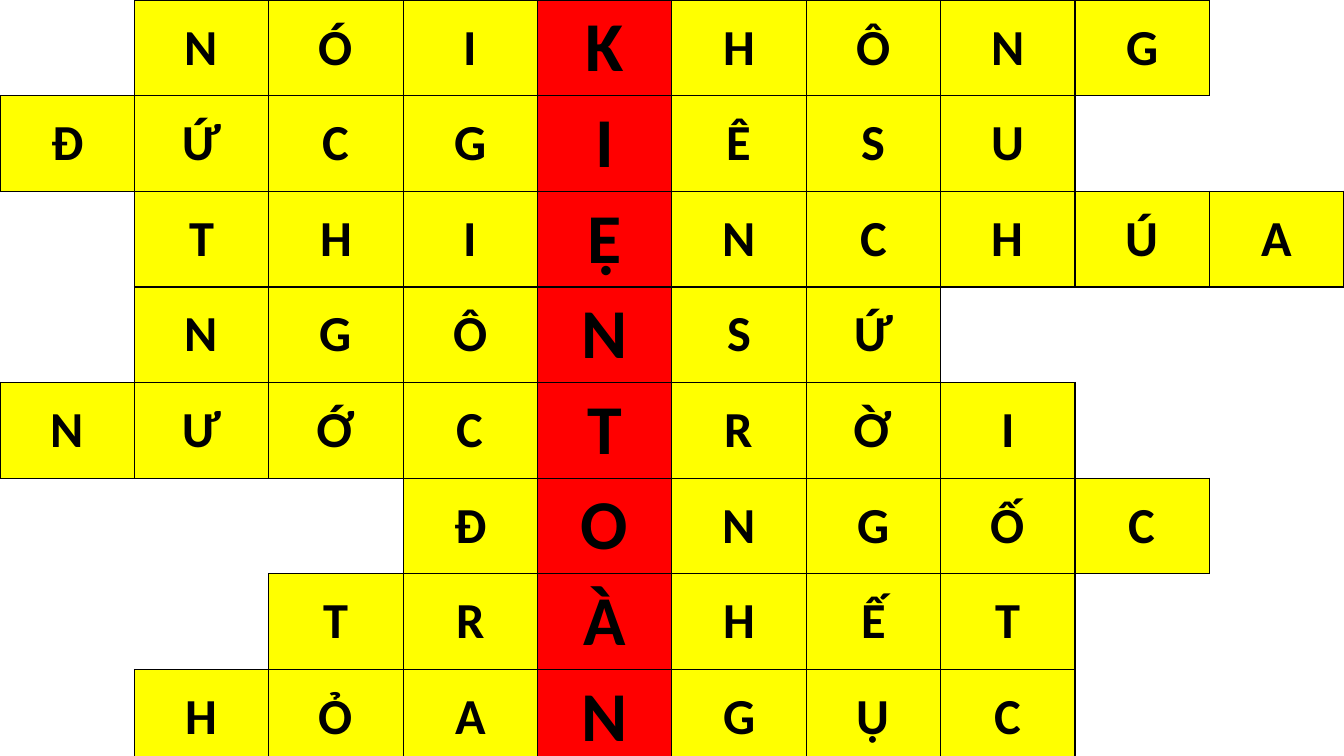
from dataclasses import dataclass

from lxml import etree
from pptx import Presentation
from pptx import util as u
from pptx.dml.color import RGBColor
from pptx.enum import text
from pptx.oxml import ns


@dataclass(frozen=True)
class Theme:
    font: str = "Calibri"
    ink: str = "000000"
    letter_fill: str = "FFFF00"
    keyword_fill: str = "FF0000"
    empty_fill: str = "FFFFFF"
    letter_size: int = 36
    keyword_size: int = 50
    border_width: int = 1


# Crossword rows: a space is an empty square
ROWS = [
    " NÓIKHÔNG ",
    "ĐỨCGIÊSU  ",
    " THIỆNCHÚA",
    " NGÔNSỨ   ",
    "NƯỚCTRỜI  ",
    "   ĐONGỐC ",
    "  TRÀHẾT  ",
    " HỎANGỤC  ",
]
KEYWORD_COLUMN = 4
WIDTH, HEIGHT = 960, 540
# Border tags in schema order, with the step to the neighbouring square
SIDES = {"a:lnL": (0, -1), "a:lnR": (0, 1), "a:lnT": (-1, 0), "a:lnB": (1, 0)}


def is_letter(row, column):
    inside = 0 <= row < len(ROWS) and 0 <= column < len(ROWS[0])
    return inside and ROWS[row][column] != " "


class CrosswordSlide:
    def __init__(self, presentation, theme):
        self.theme = theme
        self.slide = presentation.slides.add_slide(presentation.slide_layouts[6])

    def border(self, cell, tag, visible):
        properties = cell._tc.get_or_add_tcPr()
        line = etree.SubElement(properties, ns.qn(tag), w=str(u.Pt(self.theme.border_width)))
        if visible:
            fill = etree.SubElement(line, ns.qn("a:solidFill"))
            etree.SubElement(fill, ns.qn("a:srgbClr"), val=self.theme.ink)
        else:
            etree.SubElement(line, ns.qn("a:noFill"))

    def square(self, cell, row, column):
        theme = self.theme
        filled = is_letter(row, column)
        keyword = column == KEYWORD_COLUMN

        # A side is drawn when either square it separates holds a letter
        for tag, (down, right) in SIDES.items():
            self.border(cell, tag, filled or is_letter(row + down, column + right))

        color = theme.empty_fill
        if filled:
            color = theme.keyword_fill if keyword else theme.letter_fill
        cell.fill.solid()
        cell.fill.fore_color.rgb = RGBColor.from_string(color)

        if filled:
            cell.text = ROWS[row][column]
            cell.vertical_anchor = text.MSO_ANCHOR.MIDDLE
            paragraph = cell.text_frame.paragraphs[0]
            paragraph.alignment = text.PP_ALIGN.CENTER
            font = paragraph.font
            font.name = theme.font
            font.size = u.Pt(theme.keyword_size if keyword else theme.letter_size)
            font.bold = True
            font.color.rgb = RGBColor.from_string(theme.ink)

    def grid(self):
        table = self.slide.shapes.add_table(
            len(ROWS), len(ROWS[0]), u.Pt(0), u.Pt(0), u.Pt(WIDTH), u.Pt(HEIGHT)
        ).table
        table.first_row = table.horz_banding = False
        for column in table.columns:
            column.width = u.Pt(WIDTH / len(ROWS[0]))
        for row, table_row in enumerate(table.rows):
            table_row.height = u.Pt(HEIGHT / len(ROWS))
            for column, cell in enumerate(table_row.cells):
                self.square(cell, row, column)


def main():
    presentation = Presentation()
    presentation.slide_width, presentation.slide_height = u.Pt(WIDTH), u.Pt(HEIGHT)
    CrosswordSlide(presentation, Theme()).grid()
    presentation.save("out.pptx")


if __name__ == "__main__":
    main()
